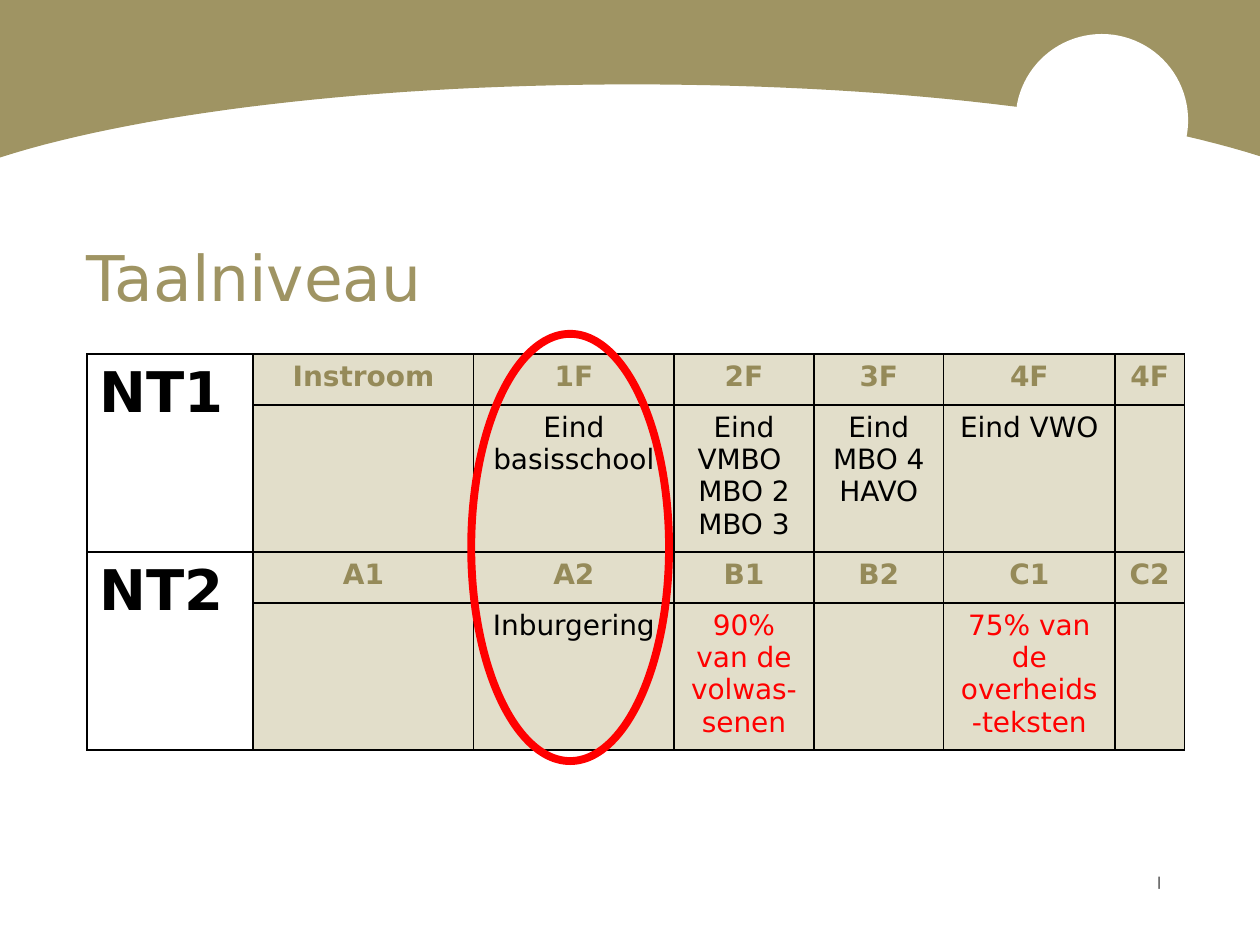
from pptx import Presentation
from pptx.dml.color import RGBColor
from pptx.enum.shapes import MSO_SHAPE
from pptx.enum.text import MSO_ANCHOR, PP_ALIGN
from pptx.oxml import parse_xml
from pptx.oxml.ns import nsdecls
from pptx.util import Inches, Pt

ELLIPSE = MSO_SHAPE.OVAL
TOP = MSO_ANCHOR.TOP
LEFT, CENTER = PP_ALIGN.LEFT, PP_ALIGN.CENTER

# The slide is a grid of 100 columns by 75 rows
GRID_COLUMNS, GRID_ROWS = 100, 75
WIDTH, HEIGHT = Inches(10), Inches(7.5)

GOLD, SAND, HEADING = "9F9463", "E2DECA", "958A59"
BLACK, WHITE, RED = "000000", "FFFFFF", "FF0000"


def color(value):
    return RGBColor.from_string(value)


def curve(start, first, second, end, steps=30):
    """Points along a cubic curve, without its start."""
    points = []
    for step in range(1, steps + 1):
        t = step / steps
        weights = ((1 - t) ** 3, 3 * t * (1 - t) ** 2, 3 * t * t * (1 - t), t ** 3)
        points.append(tuple(
            sum(weight * point[axis] for weight, point in zip(weights, (start, first, second, end)))
            for axis in (0, 1)
        ))
    return points


class SlideBuilder:
    font = "DejaVu Sans"

    def __init__(self, deck):
        self.page = deck.slides.add_slide(deck.slide_layouts[5])

    def x(self, columns):
        return round(WIDTH * columns / GRID_COLUMNS)

    def y(self, rows):
        return round(HEIGHT * rows / GRID_ROWS)

    def area(self, left, top, width, height):
        return self.x(left), self.y(top), self.x(width), self.y(height)

    def add_text(self, frame, text, size, ink, bold=False, align=LEFT):
        para = frame.paragraphs[0]
        para.alignment = align
        for number, line in enumerate(text.split("\n")):
            if number:
                para.add_line_break()
            span = para.add_run()
            span.text = line
            span.font.name = self.font
            span.font.size = Pt(size)
            span.font.bold = bold
            span.font.color.rgb = color(ink)

    def clear_margins(self, frame):
        frame.margin_left = frame.margin_right = 0
        frame.margin_top = frame.margin_bottom = 0
        frame.vertical_anchor = TOP

    def title(self, text, area):
        box = self.page.shapes.title
        box.left, box.top, box.width, box.height = self.area(*area)
        self.clear_margins(box.text_frame)
        box.text_frame.margin_top = Inches(0.04)
        self.add_text(box.text_frame, text, 36, GOLD)

    def label(self, text, area, size):
        box = self.page.shapes.add_textbox(*self.area(*area))
        self.clear_margins(box.text_frame)
        box.text_frame.word_wrap = True
        self.add_text(box.text_frame, text, size, BLACK, align=CENTER)

    def outline(self, points, fill):
        start, *others = [(self.x(column), self.y(row)) for column, row in points]
        builder = self.page.shapes.build_freeform(*start)
        builder.add_line_segments(others, close=True)
        self.dress(builder.convert_to_shape(), fill)

    def ellipse(self, area, fill=None, line=None, weight=1):
        shape = self.page.shapes.add_shape(ELLIPSE, *self.area(*area))
        self.dress(shape, fill, line, weight)

    def dress(self, shape, fill=None, line=None, weight=1):
        shape.shadow.inherit = False
        if fill:
            shape.fill.solid()
            shape.fill.fore_color.rgb = color(fill)
        else:
            shape.fill.background()
        if line:
            shape.line.color.rgb = color(line)
            shape.line.width = Pt(weight)
        else:
            shape.line.fill.background()

    def table(self, left, top, widths, heights):
        area = self.area(left, top, sum(widths), sum(heights))
        table = self.page.shapes.add_table(len(heights), len(widths), *area).table
        table.first_row = table.horz_banding = False
        for column, width in zip(table.columns, widths):
            column.width = self.x(width)
        for row, height in zip(table.rows, heights):
            row.height = self.y(height)
        for cell in table.iter_cells():
            self.border(cell)
            cell.fill.solid()
            cell.fill.fore_color.rgb = color(SAND)
        return table

    def border(self, cell):
        properties = cell._tc.get_or_add_tcPr()
        for side in ("lnL", "lnR", "lnT", "lnB"):
            properties.append(parse_xml(
                f'<a:{side} {nsdecls("a")} w="{Pt(1)}"><a:solidFill>'
                f'<a:srgbClr val="{BLACK}"/></a:solidFill></a:{side}>'
            ))


# Language groups: name, level codes, descriptions, ink of the descriptions
GROUPS = [
    ("NT1",
     ["Instroom", "1F", "2F", "3F", "4F", "4F"],
     ["", "Eind basisschool", "Eind VMBO \nMBO 2 MBO 3", "Eind MBO 4 HAVO", "Eind VWO", ""],
     [BLACK] * 6),
    ("NT2",
     ["A1", "A2", "B1", "B2", "C1", "C2"],
     ["", "Inburgering", "90% van de volwas-senen", "", "75% van de overheids-teksten", ""],
     [BLACK, BLACK, RED, BLACK, RED, BLACK]),
]


def main():
    deck = Presentation()
    deck.slide_width, deck.slide_height = WIDTH, HEIGHT
    slide = SlideBuilder(deck)

    # Header band with a curved lower edge, and a plain badge
    right, crest, left = (100, 12.4), (50.2, 6.7), (0, 12.5)
    edge = [right]
    edge += curve(right, (89, 8.9), (70.8, 6.7), crest)
    edge += curve(crest, (29.3, 6.7), (10.9, 9), left)
    slide.outline(edge + [(0, 0), (100, 0)], GOLD)
    slide.ellipse((80.6, 2.7, 13.7, 13.7), fill=WHITE)

    # Title and footer mark
    slide.title("Taalniveau", (6.9, 18.5, 86.2, 8.7))
    slide.label("|", (91.6, 69.4, 0.8, 2), 7)

    # Level table: each group takes a row of codes and a row of descriptions
    widths = [13.2, 17.5, 15.9, 11.1, 10.3, 13.6, 5.5]
    table = slide.table(6.9, 28.1, widths, [4.05, 11.27] * len(GROUPS))
    for group, (name, codes, notes, inks) in enumerate(GROUPS):
        row = 2 * group
        head = table.cell(row, 0)
        head.merge(table.cell(row + 1, 0))
        head.fill.fore_color.rgb = color(WHITE)
        slide.add_text(head.text_frame, name, 32, BLACK, bold=True)
        for column, (code, note, ink) in enumerate(zip(codes, notes, inks), 1):
            slide.add_text(table.cell(row, column).text_frame, code, 16, HEADING, True, CENTER)
            if note:
                slide.add_text(table.cell(row + 1, column).text_frame, note, 16, ink, align=CENTER)

    # Ring around levels 1F and A2
    slide.ellipse((37.4, 26.5, 15.7, 33.9), line=RED, weight=4.5)

    deck.save("out.pptx")


if __name__ == "__main__":
    main()
